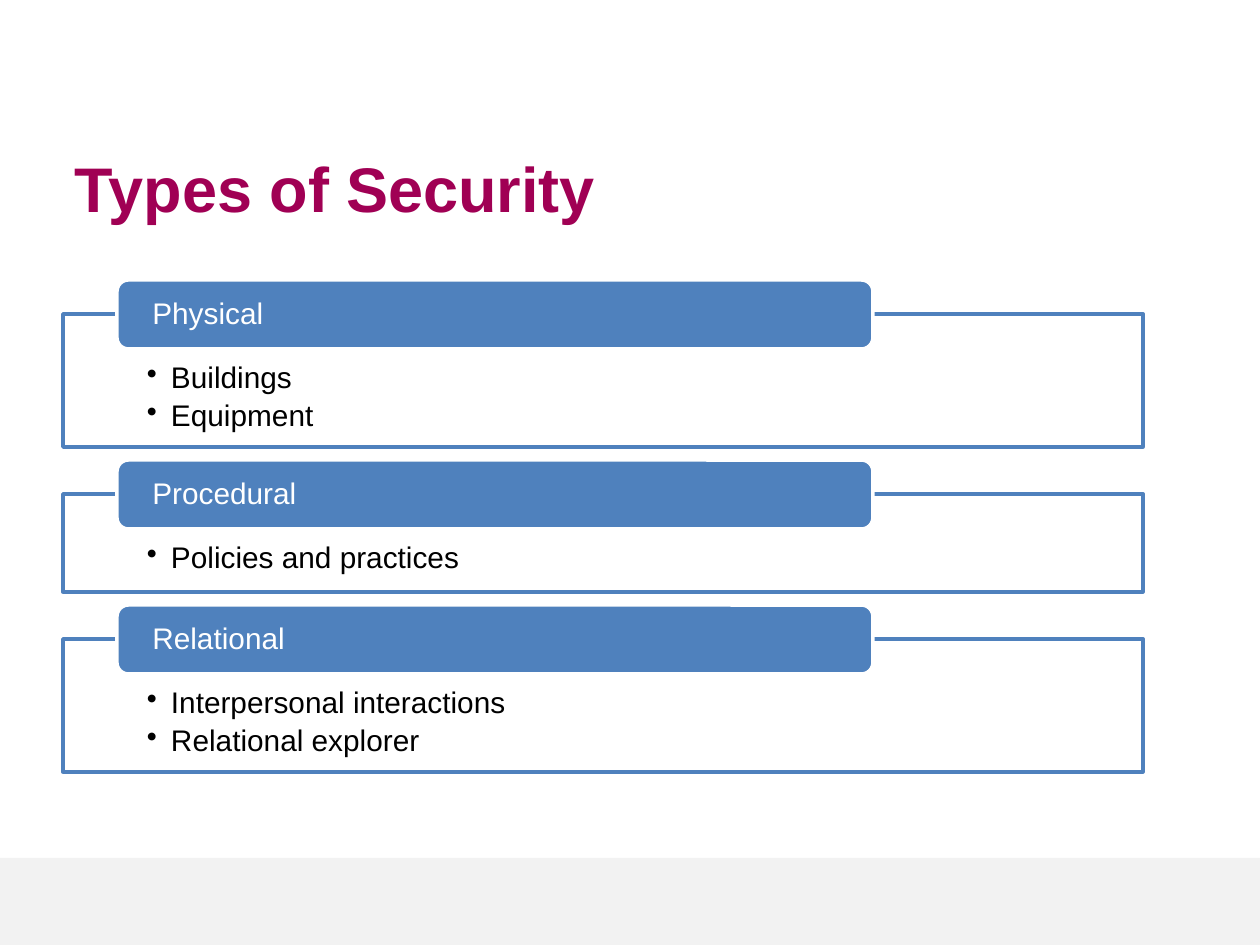
from dataclasses import dataclass

from lxml.etree import SubElement
from pptx import Presentation
from pptx.dml.color import RGBColor as Color
from pptx.enum.shapes import MSO_SHAPE as Shape
from pptx.enum.text import MSO_ANCHOR as Anchor, PP_ALIGN as Align
from pptx.oxml.ns import qn
from pptx.util import Pt

SCALE = 914400 / 126


def px(length):
    return round(length * SCALE)


@dataclass(frozen=True)
class Theme:
    font: str = "Arial"
    title_size: int = 36
    body_size: int = 17
    line_width: int = 2
    title: str = "A00054"
    accent: str = "4F81BD"
    paper: str = "FFFFFF"
    ink: str = "000000"
    band: str = "F2F2F2"


class SlideBuilder:
    """Draw themed elements on one slide, with lengths in px."""

    def __init__(self, slide, theme):
        self.slide = slide
        self.theme = theme

    def panel(self, kind, area, fill, line=None):
        box = self.slide.shapes.add_shape(kind, *map(px, area))
        box.shadow.inherit = False
        box.fill.solid()
        box.fill.fore_color.rgb = Color.from_string(fill)
        if line:
            box.line.color.rgb = Color.from_string(line)
            box.line.width = Pt(self.theme.line_width)
        else:
            box.line.fill.background()
        return box

    def set_text(self, box, text, size, color, insets, anchor, bold=False):
        frame = box.text_frame
        frame.word_wrap = True
        frame.vertical_anchor = anchor
        (frame.margin_left, frame.margin_top,
         frame.margin_right, frame.margin_bottom) = map(px, insets)
        frame.text = text
        for para in frame.paragraphs:
            para.alignment = Align.LEFT
            for span in para.runs:
                span.font.name = self.theme.font
                span.font.size = Pt(size)
                span.font.bold = bold
                span.font.color.rgb = Color.from_string(color)
        return frame.paragraphs

    def title(self, text, area):
        box = self.slide.shapes.add_textbox(*map(px, area))
        self.set_text(box, text, self.theme.title_size, self.theme.title,
                      (12, 6, 12, 6), Anchor.MIDDLE, bold=True)

    def bullet_frame(self, items, area):
        theme = self.theme
        box = self.panel(Shape.RECTANGLE, area, theme.paper, theme.accent)
        paras = self.set_text(box, "\n".join(items), theme.body_size, theme.ink,
                              (84, 49, 84, 16), Anchor.TOP)
        for para in paras:
            para.line_spacing = 0.9
            para.space_after = Pt(3.5)
            properties = para._p.get_or_add_pPr()
            properties.set("marL", str(px(24)))
            properties.set("indent", str(px(-24)))
            SubElement(properties, qn("a:buChar")).set("char", "•")

    def tab(self, text, area):
        theme = self.theme
        box = self.panel(Shape.ROUNDED_RECTANGLE, area, theme.accent, theme.paper)
        paras = self.set_text(box, text, theme.body_size, theme.paper,
                              (32, 0, 32, 0), Anchor.MIDDLE)
        paras[0].line_spacing = 0.9


SECTIONS = {
    "Physical": ["Buildings", "Equipment"],
    "Procedural": ["Policies and practices"],
    "Relational": ["Interpersonal interactions", "Relational explorer"],
}


def main():
    deck = Presentation()
    deck.slide_width, deck.slide_height = px(1260), px(945)
    page = deck.slides.add_slide(deck.slide_layouts[6])
    theme = Theme()
    builder = SlideBuilder(page, theme)
    builder.panel(Shape.RECTANGLE, (0, 858, 1260, 87), theme.band)
    builder.title("Types of Security", (63, 141, 1071, 93))

    tab_top, overlap, gap = 280, 34, 13
    for heading, items in SECTIONS.items():
        frame_top = tab_top + overlap
        frame_height = 63 + 35 * len(items)
        builder.bullet_frame(items, (63, frame_top, 1080, frame_height))
        builder.tab(heading, (117, tab_top, 756, 69))
        tab_top = frame_top + frame_height + gap

    deck.save("out.pptx")


if __name__ == "__main__":
    main()
